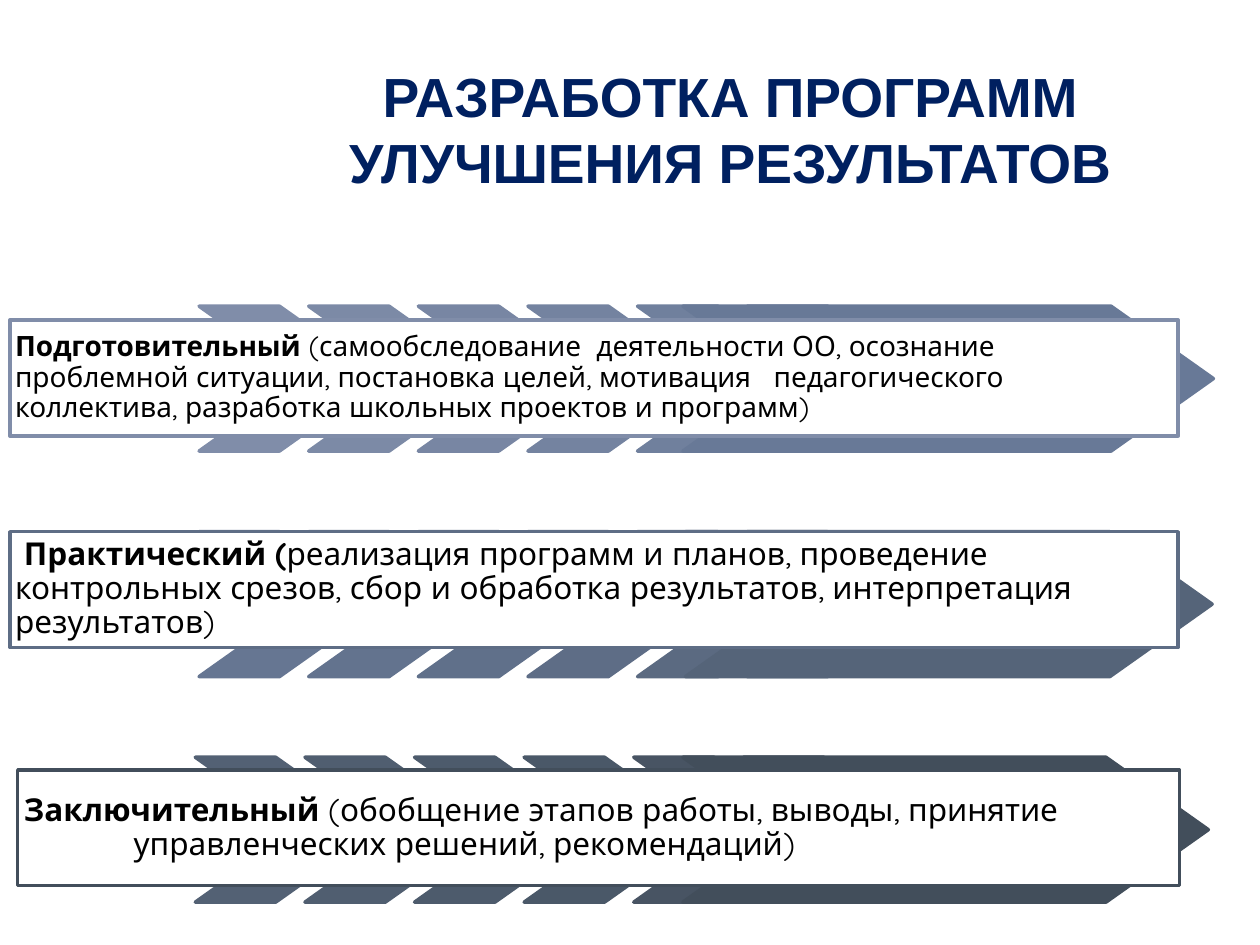
from dataclasses import dataclass

from pptx import Presentation
from pptx.dml.color import RGBColor
from pptx.enum.shapes import MSO_SHAPE as Preset
from pptx.enum.text import MSO_ANCHOR as Anchor, MSO_AUTO_SIZE as AutoSize, PP_ALIGN as Align
from pptx.util import Inches, Pt

CHEVRON_COUNT = 6
CHEVRON_STEP = 0.87
CHEVRON_WIDTH = 1.45
CHEVRON_HEIGHT = 1.15
CHEVRON_POINT = 0.706
ROW_TOP = 2.43
ROW_STEP = 1.79
BOX_HEIGHT = 0.92


@dataclass
class Stage:
    name: str
    details: str
    size: float
    first_color: str
    last_color: str
    border_color: str
    chevrons_left: float
    arrow_left: float
    arrow_width: float
    box_left: float
    box_width: float
    box_drop: float
    inset: float = 0.04
    hanging: float = 0


STAGES = [
    Stage("Подготовительный",
          " (самообследование  деятельности ОО, осознание проблемной ситуации, "
          "постановка целей, мотивация   педагогического коллектива, "
          "разработка школьных проектов и программ)",
          16, "808DA9", "687997", "808DA9", 1.58, 5.42, 4.21, 0.08, 9.27, 0.11),
    Stage(" Практический (",
          "реализация программ и планов, проведение контрольных срезов, "
          "сбор и обработка результатов, интерпретация результатов)",
          18, "667692", "556479", "5E6D85", 1.58, 5.44, 4.18, 0.08, 9.27, 0),
    Stage("Заключительный",
          " (обобщение этапов работы, выводы, принятие "
          "управленческих решений, рекомендаций)",
          18, "536174", "424E5B", "424E5B", 1.55, 5.42, 4.17, 0.14, 9.22, 0.1,
          inset=0.05, hanging=0.87),
]


def color(code: str) -> RGBColor:
    return RGBColor.from_string(code)


def blend(first: str, last: str, share: float) -> str:
    pairs = zip(bytes.fromhex(first), bytes.fromhex(last))
    return "".join(f"{round(a + (b - a) * share):02X}" for a, b in pairs)


def add_block(slide, preset, left: float, top: float, width: float, height: float,
              fill: str, border: str):
    block = slide.shapes.add_shape(
        preset, Inches(left), Inches(top), Inches(width), Inches(height))
    block.shadow.inherit = False
    block.fill.solid()
    block.fill.fore_color.rgb = color(fill)
    block.line.color.rgb = color(border)
    block.line.width = Pt(2)
    return block


def add_chevrons(slide, stage: Stage, top: float) -> None:
    spans = [(stage.chevrons_left + i * CHEVRON_STEP, CHEVRON_WIDTH)
             for i in range(CHEVRON_COUNT)]
    spans.append((stage.arrow_left, stage.arrow_width))
    for i, (left, width) in enumerate(spans):
        shade = blend(stage.first_color, stage.last_color, i / CHEVRON_COUNT)
        chevron = add_block(slide, Preset.CHEVRON, left, top, width,
                            CHEVRON_HEIGHT, shade, shade)
        chevron.adjustments[0] = CHEVRON_POINT


def add_description(slide, stage: Stage, top: float) -> None:
    box = add_block(slide, Preset.RECTANGLE, stage.box_left, top + stage.box_drop,
                    stage.box_width, BOX_HEIGHT, "FFFFFF", stage.border_color)
    frame = box.text_frame
    frame.word_wrap = True
    frame.vertical_anchor = Anchor.MIDDLE
    frame.margin_left = frame.margin_right = Inches(stage.inset)
    frame.margin_top = frame.margin_bottom = Inches(stage.inset)
    paragraph = frame.paragraphs[0]
    paragraph.alignment = Align.LEFT
    paragraph.line_spacing = 0.9
    if stage.hanging:
        properties = paragraph._p.get_or_add_pPr()
        properties.set("marL", str(Inches(stage.hanging)))
        properties.set("indent", str(-Inches(stage.hanging)))
    for text, bold in ((stage.name, True), (stage.details, False)):
        run = paragraph.add_run()
        run.text = text
        run.font.name = "Quicksand"
        run.font.size = Pt(stage.size)
        run.font.bold = bold
        run.font.color.rgb = color("000000")


def add_heading(slide, text: str) -> None:
    heading = slide.shapes.title
    heading.left, heading.top = Inches(2.09), Inches(0.45)
    heading.width, heading.height = Inches(7.41), Inches(1.14)
    frame = heading.text_frame
    frame.text = text
    frame.word_wrap = True
    frame.auto_size = AutoSize.NONE
    frame.vertical_anchor = Anchor.MIDDLE
    paragraph = frame.paragraphs[0]
    paragraph.alignment = Align.CENTER
    font = paragraph.runs[0].font
    font.name = "Arial"
    font.size = Pt(31.5)
    font.bold = True
    font.color.rgb = color("002060")


def main() -> None:
    deck = Presentation()
    deck.slide_width, deck.slide_height = Inches(10), Inches(7.5)
    slide = deck.slides.add_slide(deck.slide_layouts[5])
    add_heading(slide, "РАЗРАБОТКА ПРОГРАММ УЛУЧШЕНИЯ РЕЗУЛЬТАТОВ")
    for row, stage in enumerate(STAGES):
        top = ROW_TOP + row * ROW_STEP
        add_chevrons(slide, stage, top)
        add_description(slide, stage, top)
    deck.save("out.pptx")


if __name__ == "__main__":
    main()
